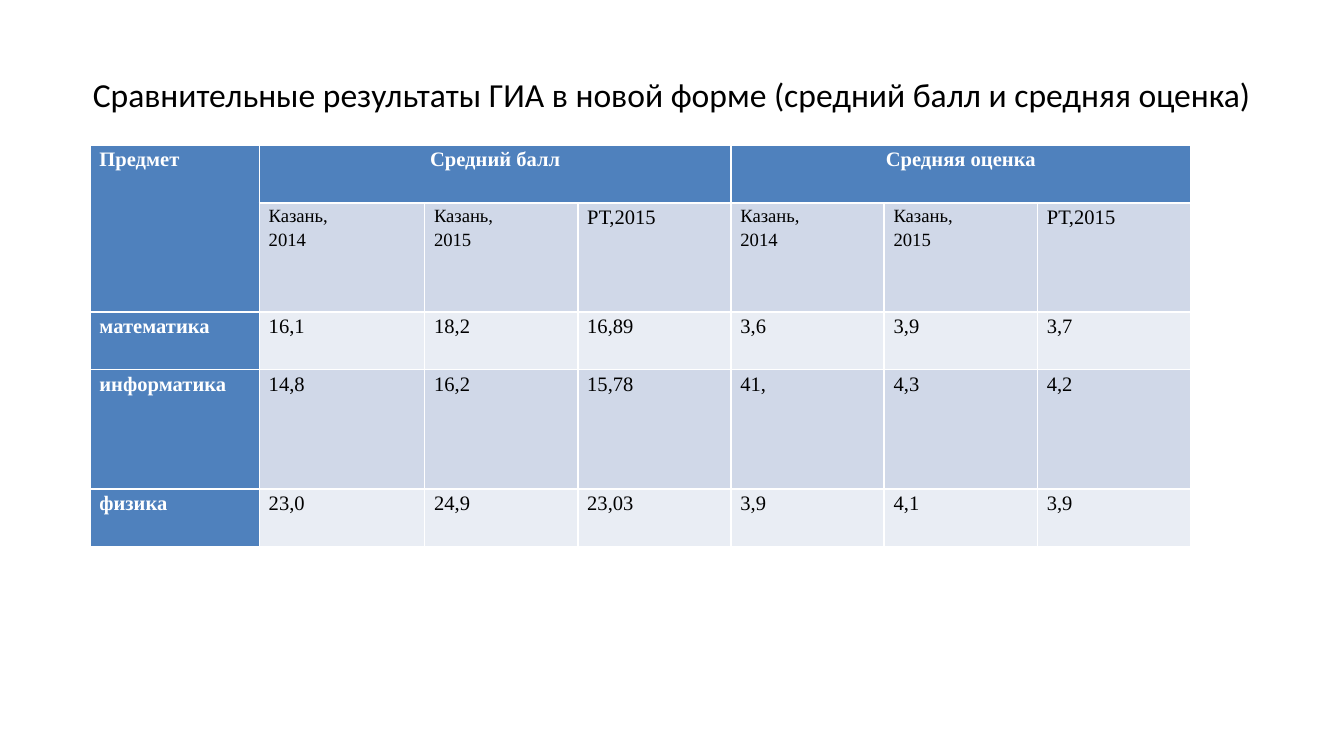
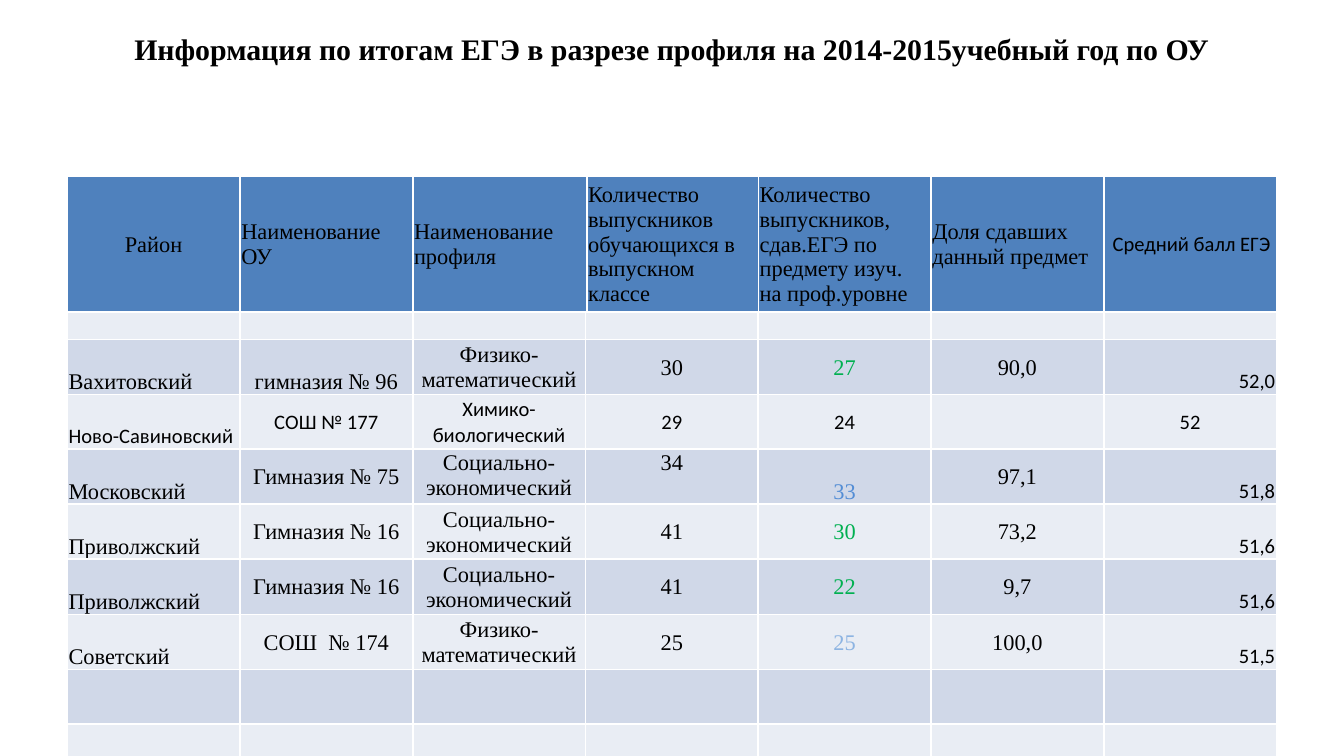
from pptx import Presentation
from pptx.dml.color import RGBColor
from pptx.enum import text as t
from pptx.util import Inches, Pt

BLUE, BAND_DARK, BAND_LIGHT = "4F81BD", "D0D8E8", "E9EDF4"
BLACK, WHITE = "000000", "FFFFFF"
SERIF, SANS = "Times New Roman", "Calibri"
LEFT, CENTER, RIGHT = t.PP_ALIGN.LEFT, t.PP_ALIGN.CENTER, t.PP_ALIGN.RIGHT
TOP, MIDDLE, BOTTOM = t.MSO_ANCHOR.TOP, t.MSO_ANCHOR.MIDDLE, t.MSO_ANCHOR.BOTTOM


def write(frame, wording, size, font=SERIF, color=BLACK, bold=False, align=LEFT, spacing=None):
    frame.text = wording
    for paragraph in frame.paragraphs:
        paragraph.alignment = align
        paragraph.line_spacing = spacing
        for run in paragraph.runs:
            run.font.size = Pt(size)
            run.font.name = font
            run.font.bold = bold
            run.font.color.rgb = RGBColor.from_string(color)


def add_banded_table(slide, place, row_count, side, edge, first_col=False):
    """Add a seven-column table; its white rules come from the default table style."""
    table = slide.shapes.add_table(row_count, 7, *map(Inches, place)).table
    table.first_col = first_col
    for r in range(row_count):
        for c in range(7):
            cell = table.cell(r, c)
            cell.margin_left = cell.margin_right = Inches(side)
            cell.margin_top, cell.margin_bottom = Inches(edge), 0
            heading = r == 0 or (first_col and c == 0)
            band = BLUE if heading else BAND_DARK if r % 2 else BAND_LIGHT
            cell.fill.solid()
            cell.fill.fore_color.rgb = RGBColor.from_string(band)
    return table


prs = Presentation()
prs.slide_width = Inches(10)
prs.slide_height = Inches(10 * 9 / 16)

titles = [
    ("Сравнительные результаты ГИА в новой форме (средний балл и средняя оценка)",
     0.94, MIDDLE, 18, SANS, False),
    ("Информация по итогам ЕГЭ в разрезе профиля на 2014-2015учебный год по ОУ",
     0.46, TOP, 16, SERIF, True),
]
slides = []
for wording, height, anchor, size, font, bold in titles:
    slide = prs.slides.add_slide(prs.slide_layouts[6])
    frame = slide.shapes.add_textbox(Inches(0.5), Inches(0.23), Inches(9), Inches(height)).text_frame
    frame.word_wrap = True
    frame.vertical_anchor = anchor
    frame.margin_top = frame.margin_bottom = 0
    write(frame, wording, size, font, bold=bold, align=CENTER)
    slides.append(slide)

# Slide 1: average points and marks by subject
periods = ["Казань,\n2014", "Казань,\n2015", "РТ,2015"]
subject_rows = [
    ["Предмет", "Средний балл", "", "", "Средняя оценка", "", ""],
    [""] + periods * 2,
    ["математика", "16,1", "18,2", "16,89", "3,6", "3,9", "3,7"],
    ["информатика", "14,8", "16,2", "15,78", "41,", "4,3", "4,2"],
    ["физика", "23,0", "24,9", "23,03", "3,9", "4,1", "3,9"],
]
subjects = add_banded_table(slides[0], (0.67, 1.08, 8.19, 2.99), len(subject_rows), 0.07, 0,
                            first_col=True)
for column, width in zip(subjects.columns, [1.26, 1.23] + [1.14] * 5):
    column.width = Inches(width)
for row, height in zip(subjects.rows, [0.43, 0.81, 0.43, 0.89, 0.43]):
    row.height = Inches(height)
for first, last in [((0, 0), (1, 0)), ((0, 1), (0, 3)), ((0, 4), (0, 6))]:
    subjects.cell(*first).merge(subjects.cell(*last))
for r, row in enumerate(subject_rows):
    for c, wording in enumerate(row):
        if wording:
            heading = r == 0 or c == 0
            write(subjects.cell(r, c).text_frame, wording, 10 if "\n" in wording else 11,
                  color=WHITE if heading else BLACK, bold=heading,
                  align=CENTER if r == 0 and c else LEFT, spacing=1.15)

# Slide 2: exam results by school profile
school_rows = [
    ["Вахитовский", "гимназия № 96", "Физико-математический", "30", "27", "90,0", "52,0"],
    ["Ново-Савиновский", "СОШ № 177", "Химико-биологический", "29", "24", "", "52"],
    ["Московский", "Гимназия № 75", "Социально-экономический", "34", "33", "97,1", "51,8"],
    ["Приволжский", "Гимназия № 16", "Социально-экономический", "41", "30", "73,2", "51,6"],
    ["Приволжский", "Гимназия № 16", "Социально-экономический", "41", "22", "9,7", "51,6"],
    ["Советский", "СОШ  № 174", "Физико-математический", "25", "25", "100,0", "51,5"],
]
passed_colors = ["00B050", BLACK, "538DD5", "00B050", "00B050", "8DB4E2"]
FIRST_SCHOOL_ROW, SANS_SCHOOL, PASSED, SCORE = 3, 1, 4, 6
column_anchors = [BOTTOM] + [MIDDLE] * 5 + [BOTTOM]
column_aligns = [LEFT] + [CENTER] * 5 + [RIGHT]
special_anchors = {(0, 1): BOTTOM, (1, 6): MIDDLE, (2, 2): TOP, (2, 3): TOP, (2, 4): BOTTOM}

schools = add_banded_table(slides[1], (0.5, 1.31, 9, 4.46), 11, 0.01, 0.01)
for r, row in enumerate(school_rows):
    for c, wording in enumerate(row):
        if wording:
            cell = schools.cell(r + FIRST_SCHOOL_ROW, c)
            cell.vertical_anchor = special_anchors.get((r, c), column_anchors[c])
            sans = r == SANS_SCHOOL or c == SCORE
            write(cell.text_frame, wording, 11 if sans else 12, SANS if sans else SERIF,
                  color=passed_colors[r] if c == PASSED else BLACK,
                  align=CENTER if (r, c) == (SANS_SCHOOL, SCORE) else column_aligns[c])

headings = [
    "Район", "Наименование ОУ", "Наименование профиля",
    "Количество выпускников обучающихся в выпускном классе",
    "Количество выпускников, сдав.ЕГЭ по предмету изуч. на проф.уровне",
    "Доля сдавших данный предмет", "Средний балл ЕГЭ ",
]
heading_aligns = [CENTER] + [LEFT] * 5 + [RIGHT]
heading_row = add_banded_table(slides[1], (0.5, 1.31, 9, 0.94), 1, 0.01, 0.01)
heading_row.columns[2].width += Inches(0.01)
heading_row.columns[3].width -= Inches(0.01)
for c, wording in enumerate(headings):
    cell = heading_row.cell(0, c)
    cell.vertical_anchor = MIDDLE
    sans = c == SCORE
    write(cell.text_frame, wording, 11 if sans else 12, SANS if sans else SERIF,
          align=heading_aligns[c])

prs.save("out.pptx")
